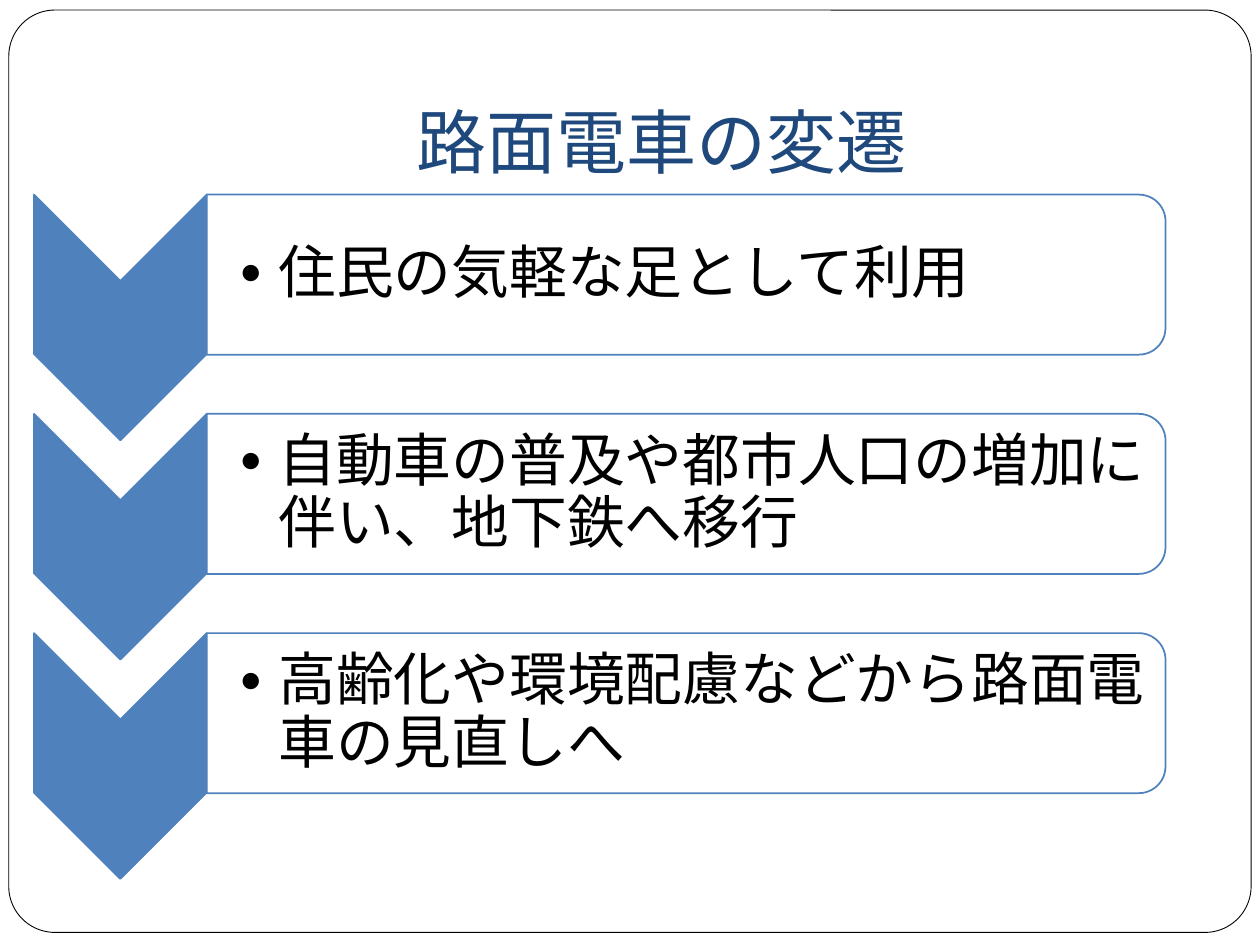
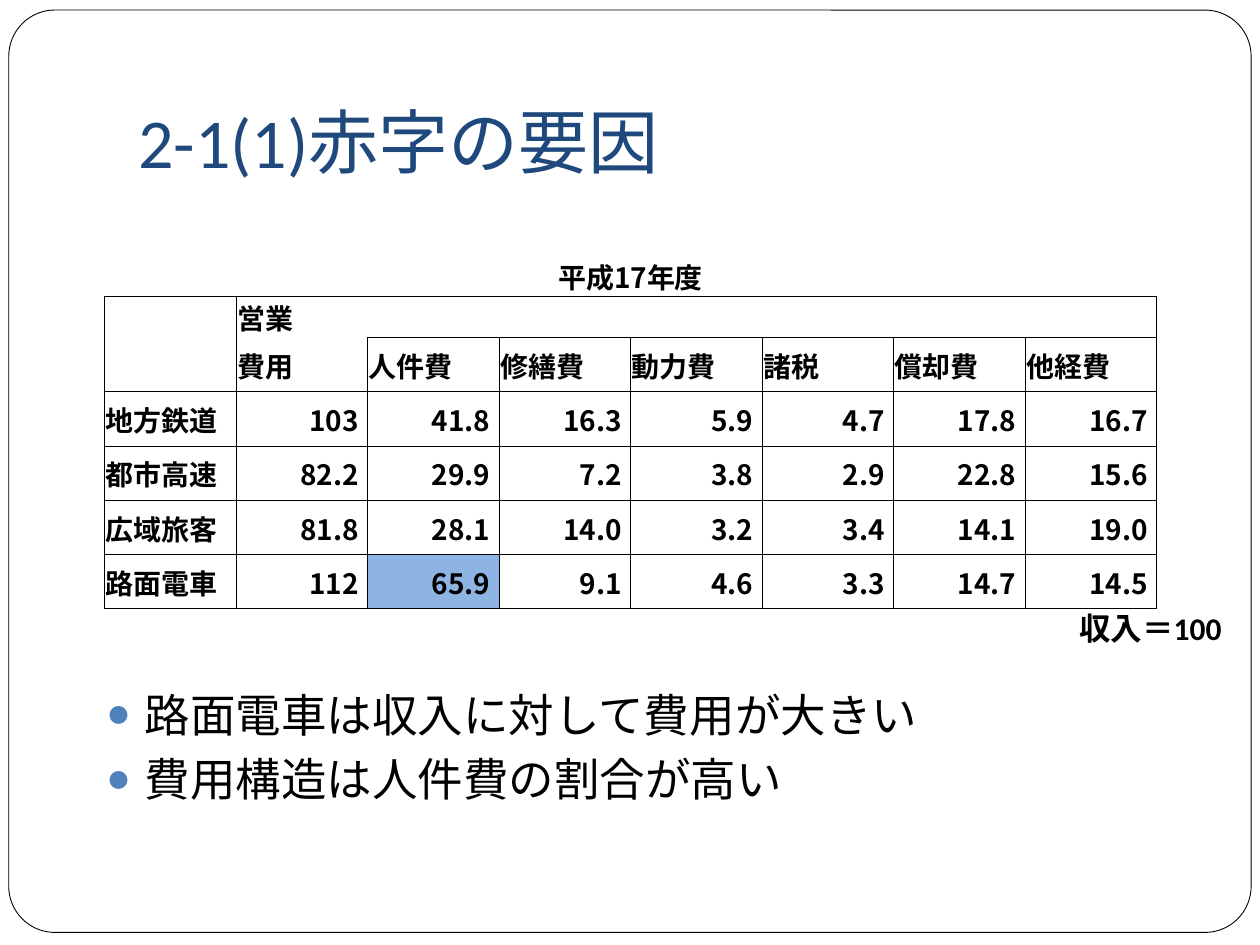
from dataclasses import dataclass
from typing import Optional

from lxml.etree import SubElement
from pptx import Presentation
from pptx.dml.color import RGBColor
from pptx.enum.lang import MSO_LANGUAGE_ID
from pptx.enum.shapes import MSO_SHAPE
from pptx.enum.text import MSO_ANCHOR, PP_ALIGN
from pptx.oxml import parse_xml
from pptx.oxml.ns import nsdecls, qn
from pptx.util import Emu, Inches, Pt

WIDTH, HEIGHT = Inches(10), Inches(7.5)
UNIT = WIDTH / 100
LATIN, JAPANESE = "Calibri", "Noto Sans CJK JP"
BLACK, WHITE = "000000", "FFFFFF"
NAVY, BLUE, HIGHLIGHT = "1F497D", "4F81BD", "8DB4E2"


@dataclass(frozen=True)
class Area:
    column: float
    row: float
    columns: float
    rows: float

    def box(self) -> list[Emu]:
        return [units(n) for n in (self.column, self.row, self.columns, self.rows)]

    def turned(self) -> "Area":
        shift = (self.columns - self.rows) / 2
        return Area(self.column + shift, self.row - shift, self.rows, self.columns)


@dataclass(frozen=True)
class Bullet:
    mark: str
    indent: float
    percent: int
    color: str


STAGES = (
    "住民の気軽な足として利用",
    "自動車の普及や都市人口の増加に伴い、地下鉄へ移行",
    "高齢化や環境配慮などから路面電車の見直しへ",
)
STAGE_TOP, STAGE_PITCH = 15.45, 17.4
STAGE_BULLET = Bullet("•", 3.1, 80, BLACK)
FINDINGS = ("路面電車は収入に対して費用が大きい", "費用構造は人件費の割合が高い")
FINDING_BULLET = Bullet("●", 3, 85, BLUE)
COSTS = (
    ("平成17年度",) + ("",) * 7,
    ("", "営業") + ("",) * 6,
    ("", "費用", "人件費", "修繕費", "動力費", "諸税", "償却費", "他経費"),
    ("地方鉄道", "103", "41.8", "16.3", "5.9", "4.7", "17.8", "16.7"),
    ("都市高速", "82.2", "29.9", "7.2", "3.8", "2.9", "22.8", "15.6"),
    ("広域旅客", "81.8", "28.1", "14.0", "3.2", "3.4", "14.1", "19.0"),
    ("路面電車", "112", "65.9", "9.1", "4.6", "3.3", "14.7", "14.5"),
)
HEADER_ROWS = 3
ROW_HEIGHTS = (3.3, 3.3) + (4.3,) * 5
LABOUR_SHARE = (6, 2)


def units(count: float) -> Emu:
    return Emu(round(count * UNIT))


def rgb(color: str) -> RGBColor:
    return RGBColor.from_string(color)


def set_margins(holder, insets) -> None:
    (holder.margin_left, holder.margin_top,
     holder.margin_right, holder.margin_bottom) = map(units, insets)


def add_bullet(paragraph, bullet: Bullet) -> None:
    properties = paragraph._p.get_or_add_pPr()
    properties.set("marL", str(units(bullet.indent)))
    properties.set("indent", str(-units(bullet.indent)))
    tint = SubElement(properties, qn("a:buClr"))
    SubElement(tint, qn("a:srgbClr"), val=bullet.color)
    SubElement(properties, qn("a:buSzPct"), val=str(bullet.percent * 1000))
    SubElement(properties, qn("a:buFont"), typeface=LATIN)
    SubElement(properties, qn("a:buChar"), char=bullet.mark)


def write(frame, *lines: str, size: float, color: str = BLACK, font: str = LATIN,
          bold: bool = False, align=PP_ALIGN.LEFT, spacing: Optional[float] = None,
          before: float = 0, after: float = 0,
          bullet: Optional[Bullet] = None) -> None:
    for number, line in enumerate(lines):
        paragraph = frame.add_paragraph() if number else frame.paragraphs[0]
        paragraph.alignment = align
        paragraph.line_spacing = spacing
        paragraph.space_before, paragraph.space_after = Pt(before), Pt(after)
        if bullet:
            add_bullet(paragraph, bullet)
        if not line:
            SubElement(paragraph._p, qn("a:endParaRPr"), sz=str(size * 100))
            continue
        run = paragraph.add_run()
        run.text = line
        run.font.size, run.font.bold, run.font.name = Pt(size), bold, font
        run.font.color.rgb = rgb(color)
        run.font.language_id = MSO_LANGUAGE_ID.JAPANESE
        SubElement(run.font._element, qn("a:ea"), typeface=JAPANESE)


def add_text(slide, area: Area, *lines: str, anchor=MSO_ANCHOR.TOP,
             insets=(1, 0.5, 1, 0.5), **style) -> None:
    frame = slide.shapes.add_textbox(*area.box()).text_frame
    frame.word_wrap = True
    frame.vertical_anchor = anchor
    set_margins(frame, insets)
    write(frame, *lines, **style)


def add_outline(slide, preset, area: Area, fill: str, line: str, weight: float,
                turn: bool = False, opacity: int = 100):
    placed = area.turned() if turn else area
    outline = slide.shapes.add_shape(preset, *placed.box())
    outline.rotation = 90 if turn else 0
    outline.shadow.inherit = False
    outline.fill.solid()
    outline.fill.fore_color.rgb = rgb(fill)
    outline.line.color.rgb = rgb(line)
    outline.line.width = Pt(weight)
    if opacity < 100:
        tint = outline._element.spPr.find(qn("a:solidFill")).find(qn("a:srgbClr"))
        SubElement(tint, qn("a:alpha"), val=str(opacity * 1000))
    return outline


def add_titled_slide(deck, title: str, align=PP_ALIGN.LEFT):
    slide = deck.slides.add_slide(deck.slide_layouts[6])
    border = add_outline(slide, MSO_SHAPE.ROUNDED_RECTANGLE,
                         Area(0.7, 0.8, 98.6, 73.2), WHITE, BLACK, 0.5)
    border.adjustments[0] = 0.05
    add_text(slide, Area(10, 3, 85, 12.5), title, size=40, color=NAVY, align=align,
             anchor=MSO_ANCHOR.BOTTOM, insets=(1, 0.5, 1, 1))
    return slide


def add_stage(slide, number: int, text: str) -> None:
    top = STAGE_TOP + number * STAGE_PITCH
    add_outline(slide, MSO_SHAPE.CHEVRON, Area(2.7, top, 13.7, 19.5),
                BLUE, BLUE, 1, turn=True)
    add_outline(slide, MSO_SHAPE.ROUND_2_SAME_RECTANGLE, Area(16.4, top, 76.1, 12.7),
                WHITE, BLUE, 1, turn=True, opacity=90)
    add_text(slide, Area(16.4, top + 0.65, 75.5, 11.4), text, size=33,
             anchor=MSO_ANCHOR.MIDDLE, insets=(2.6, 0.2, 0.2, 0.2),
             spacing=0.9, after=5, bullet=STAGE_BULLET)


def drawn_edges(row: int, column: int) -> str:
    if row == 0:
        return "B"
    if row == 1:
        return {0: "LRT", 1: "LT", len(COSTS[0]) - 1: "RTB"}.get(column, "TB")
    if row == 2 and column < 2:
        return "LRB"
    return "LRTB"


def set_borders(cell, drawn: str) -> None:
    properties = cell._tc.get_or_add_tcPr()
    for position, edge in enumerate("LRTB"):
        paint = (f'<a:solidFill><a:srgbClr val="{BLACK}"/></a:solidFill>'
                 if edge in drawn else "<a:noFill/>")
        properties.insert(position, parse_xml(
            f'<a:ln{edge} {nsdecls("a")} w="{Pt(0.5)}">{paint}</a:ln{edge}>'))


def fill_cost_cell(cell, row: int, column: int) -> None:
    is_number = row >= HEADER_ROWS and column > 0
    if (row, column) == LABOUR_SHARE:
        cell.fill.solid()
        cell.fill.fore_color.rgb = rgb(HIGHLIGHT)
    else:
        cell.fill.background()
    set_borders(cell, drawn_edges(row, column))
    cell.vertical_anchor = MSO_ANCHOR.MIDDLE
    set_margins(cell, (0.1, 0.1, 0.7 if is_number else 0.1, 0))
    align = (PP_ALIGN.CENTER if row == 0
             else PP_ALIGN.RIGHT if is_number else PP_ALIGN.LEFT)
    write(cell.text_frame, COSTS[row][column], size=16, font=JAPANESE, bold=True,
          align=align)


def add_cost_table(slide, area: Area) -> None:
    count = len(COSTS[0])
    costs = slide.shapes.add_table(len(COSTS), count, *area.box()).table
    costs.first_row = costs.horz_banding = False
    for column in costs.columns:
        column.width = units(area.columns / count)
    for row, height in zip(costs.rows, ROW_HEIGHTS):
        row.height = units(height)
    costs.cell(0, 0).merge(costs.cell(0, count - 1))
    for row in range(len(COSTS)):
        for column in range(count):
            fill_cost_cell(costs.cell(row, column), row, column)


def main() -> None:
    deck = Presentation()
    deck.slide_width, deck.slide_height = WIDTH, HEIGHT

    history = add_titled_slide(deck, "路面電車の変遷", PP_ALIGN.CENTER)
    for number, text in enumerate(STAGES):
        add_stage(history, number, text)

    deficit = add_titled_slide(deck, "2-1(1)赤字の要因")
    add_text(deficit, Area(7.5, 54, 85, 14.6), *FINDINGS, size=26, before=5.8,
             bullet=FINDING_BULLET)
    add_cost_table(deficit, Area(8.3, 20.2, 83.5, sum(ROW_HEIGHTS)))
    add_text(deficit, Area(80.3, 48.6, 22, 2.4), "収入＝100", size=18, bold=True,
             align=PP_ALIGN.CENTER, anchor=MSO_ANCHOR.MIDDLE)

    deck.save("out.pptx")


if __name__ == "__main__":
    main()
